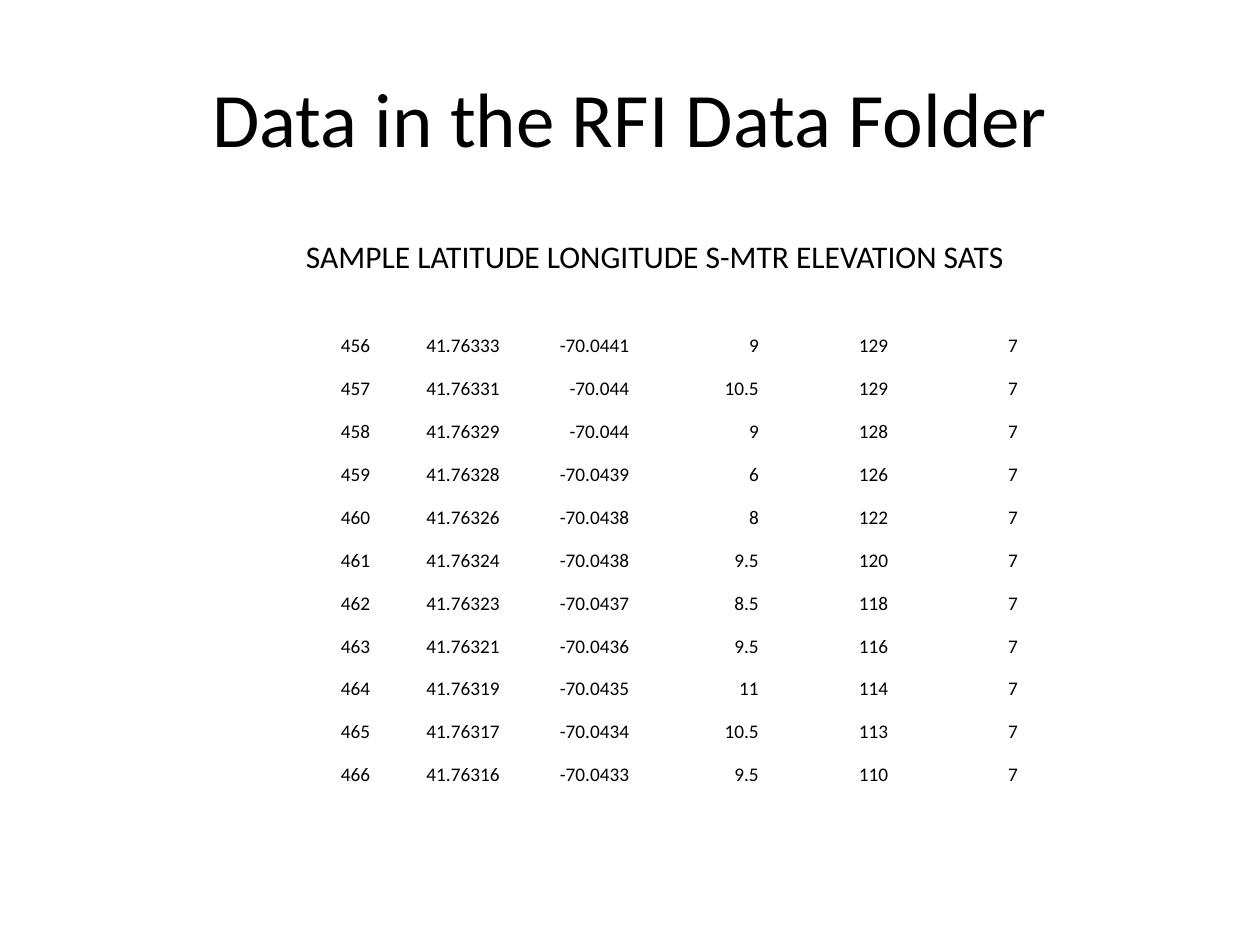
from dataclasses import dataclass

from pptx import Presentation
from pptx.dml.color import RGBColor
from pptx.enum.text import MSO_ANCHOR, MSO_AUTO_SIZE, PP_ALIGN
from pptx.util import Inches, Pt

LEFT, CENTER, RIGHT = PP_ALIGN.LEFT, PP_ALIGN.CENTER, PP_ALIGN.RIGHT
TOP, MIDDLE, BOTTOM = MSO_ANCHOR.TOP, MSO_ANCHOR.MIDDLE, MSO_ANCHOR.BOTTOM
GROW = MSO_AUTO_SIZE.SHAPE_TO_FIT_TEXT

TITLE = "Data in the RFI Data Folder"
HEADINGS = ["SAMPLE", "LATITUDE", "LONGITUDE", "S-MTR", "ELEVATION", "SATS"]
READINGS = [
    ("456", "41.76333", "-70.0441", "9", "129", "7"),
    ("457", "41.76331", "-70.044", "10.5", "129", "7"),
    ("458", "41.76329", "-70.044", "9", "128", "7"),
    ("459", "41.76328", "-70.0439", "6", "126", "7"),
    ("460", "41.76326", "-70.0438", "8", "122", "7"),
    ("461", "41.76324", "-70.0438", "9.5", "120", "7"),
    ("462", "41.76323", "-70.0437", "8.5", "118", "7"),
    ("463", "41.76321", "-70.0436", "9.5", "116", "7"),
    ("464", "41.76319", "-70.0435", "11", "114", "7"),
    ("465", "41.76317", "-70.0434", "10.5", "113", "7"),
    ("466", "41.76316", "-70.0433", "9.5", "110", "7"),
]


@dataclass(frozen=True)
class Theme:
    font: str = "Calibri"
    ink: RGBColor = RGBColor(0, 0, 0)
    paper: RGBColor = RGBColor(255, 255, 255)
    title_size: int = 44
    heading_size: int = 18
    reading_size: int = 11


THEME = Theme()
WIDTH, HEIGHT = 10, 7.5
TITLE_AREA = (0.05 * WIDTH, 0.04 * HEIGHT, 0.9 * WIDTH, HEIGHT / 6)
TABLE_AREA = (1.92, HEIGHT / 3, 6.17, HEIGHT / 2)
HEADING_AREA = (2.33, 1.83, 6.08, 0.4)


def write(frame, text, size, align):
    para = frame.paragraphs[0]
    para.alignment = align
    span = para.add_run()
    span.text = text
    span.font.name = THEME.font
    span.font.size = Pt(size)
    span.font.color.rgb = THEME.ink


def add_text(page, area, text, size, align, anchor):
    box = page.shapes.add_textbox(*map(Inches, area))
    frame = box.text_frame
    frame.word_wrap = True
    frame.vertical_anchor = anchor
    write(frame, text, size, align)
    return box


def add_readings(page):
    row_count, column_count = len(READINGS), len(READINGS[0])
    table = page.shapes.add_table(
        row_count, column_count, *map(Inches, TABLE_AREA)
    ).table
    table.first_row = False
    table.horz_banding = False
    for column in table.columns:
        column.width = Inches(TABLE_AREA[2] / column_count)
    for row, reading in zip(table.rows, READINGS):
        row.height = Inches(TABLE_AREA[3] / row_count)
        for cell, value in zip(row.cells, reading):
            cell.fill.solid()
            cell.fill.fore_color.rgb = THEME.paper
            cell.margin_left = cell.margin_right = cell.margin_top = Inches(0.01)
            cell.margin_bottom = 0
            cell.vertical_anchor = BOTTOM
            write(cell.text_frame, value, THEME.reading_size, RIGHT)


def main():
    deck = Presentation()
    deck.slide_width, deck.slide_height = Inches(WIDTH), Inches(HEIGHT)
    page = deck.slides.add_slide(deck.slide_layouts[6])
    add_text(page, TITLE_AREA, TITLE, THEME.title_size, CENTER, MIDDLE)
    add_readings(page)
    heading = add_text(
        page, HEADING_AREA, " ".join(HEADINGS), THEME.heading_size, LEFT, TOP
    )
    heading.text_frame.auto_size = GROW
    deck.save("out.pptx")


if __name__ == "__main__":
    main()
